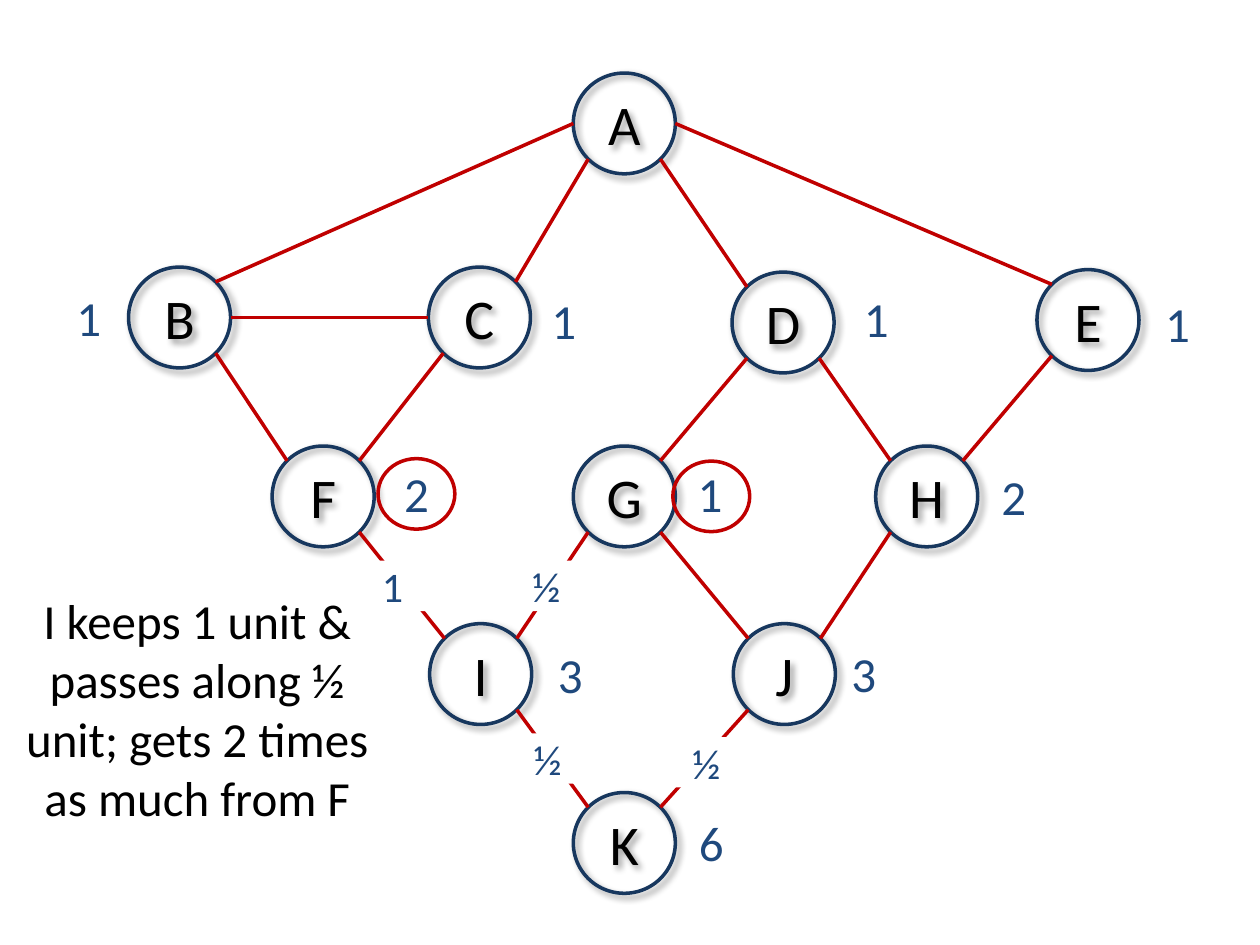
from typing import NamedTuple

from lxml import etree
from pptx import Presentation
from pptx import util as u
from pptx.dml.color import RGBColor
from pptx.enum import shapes, text
from pptx.oxml import ns

HUES = {"node": "17375E", "edge": "C00000", "count": "1F497D",
        "text": "000000", "mask": "FFFFFF"}
FONT = "Calibri"
WIDE, HIGH = 0.81, 0.8
DIAG = 0.3536  # half of sin 45, for the corner points of a circle
SITES = {"w": (-0.5, 0), "e": (0.5, 0),
         "nw": (-DIAG, -DIAG), "ne": (DIAG, -DIAG),
         "sw": (-DIAG, DIAG), "se": (DIAG, DIAG)}


class Node(NamedTuple):
    left: float
    top: float


class Edge(NamedTuple):
    start: str
    exit: str
    end: str
    entry: str


class Label(NamedTuple):
    text: str
    left: float
    top: float


NODES = {
    "A": Node(4.55, 0.58),
    "B": Node(1.02, 2.12), "C": Node(3.4, 2.12),
    "D": Node(5.81, 2.16), "E": Node(8.23, 2.14),
    "F": Node(2.16, 3.54), "G": Node(4.55, 3.54), "H": Node(6.95, 3.54),
    "I": Node(3.41, 4.95), "J": Node(5.82, 4.95),
    "K": Node(4.55, 6.29),
}
EDGES = [
    Edge("A", "w", "B", "ne"), Edge("A", "sw", "C", "ne"),
    Edge("A", "se", "D", "nw"), Edge("A", "e", "E", "nw"),
    Edge("B", "e", "C", "w"),
    Edge("B", "se", "F", "nw"), Edge("C", "sw", "F", "ne"),
    Edge("D", "sw", "G", "ne"), Edge("D", "se", "H", "nw"),
    Edge("E", "sw", "H", "ne"),
    Edge("F", "se", "I", "nw"), Edge("G", "sw", "I", "ne"),
    Edge("G", "se", "J", "nw"), Edge("H", "sw", "J", "ne"),
    Edge("I", "se", "K", "nw"), Edge("J", "sw", "K", "ne"),
]
COUNTS = [
    Label("1", 0.4, 2.23), Label("1", 4.17, 2.26),
    Label("1", 6.65, 2.24), Label("1", 9.04, 2.28),
    Label("2", 3, 3.63), Label("1", 5.33, 3.63), Label("2", 7.74, 3.65),
    Label("3", 4.22, 5.07), Label("3", 6.55, 5.06), Label("6", 5.34, 6.4),
]
RINGS = [(3, 3.64), (5.34, 3.66)]
FLOWS = [
    Label("½ ", 4.08, 5.82), Label("½ ", 5.34, 5.85),
    Label("½ ", 4.07, 4.45), Label("1", 2.81, 4.45),
]


def hue(key: str) -> RGBColor:
    return RGBColor.from_string(HUES[key])


def box(*sides: float) -> list[u.Length]:
    return [u.Inches(side) for side in sides]


def write(shape, words: str, size: int, key: str, pad=(0.1, 0.05)) -> None:
    frame = shape.text_frame
    frame.word_wrap = True
    frame.margin_left = frame.margin_right = u.Inches(pad[0])
    frame.margin_top = frame.margin_bottom = u.Inches(pad[1])
    para = frame.paragraphs[0]
    para.text = words
    para.alignment = text.PP_ALIGN.CENTER
    para.font.name = FONT
    para.font.size = u.Pt(size)
    para.font.color.rgb = hue(key)


def stroke(shape, key: str) -> None:
    shape.line.color.rgb = hue(key)
    shape.line.width = u.Pt(2)


def shade(shape) -> None:
    """Give the shape a soft shadow to its lower right."""
    list_ = shape._element.spPr.find(ns.qn("a:effectLst"))
    drop = etree.SubElement(list_, ns.qn("a:outerShdw"), blurRad=str(u.Pt(4)),
                            dist=str(u.Pt(3)), dir="2700000", algn="tl",
                            rotWithShape="0")
    tint = etree.SubElement(drop, ns.qn("a:srgbClr"), val=HUES["text"])
    etree.SubElement(tint, ns.qn("a:alpha"), val="40000")


def draw_ring(slide, key: str, *area: float):
    ring = slide.shapes.add_shape(shapes.MSO_SHAPE.OVAL, *box(*area))
    ring.shadow.inherit = False
    ring.fill.background()
    stroke(ring, key)
    return ring


def draw_node(slide, name: str, node: Node) -> None:
    ring = draw_ring(slide, "node", node.left, node.top, WIDE, HIGH)
    shade(ring)
    ring.text_frame.vertical_anchor = text.MSO_ANCHOR.MIDDLE
    write(ring, name, 32, "text", (0, 0.05))


def point(name: str, site: str) -> list[u.Length]:
    node, (across, down) = NODES[name], SITES[site]
    return box(node.left + WIDE * (0.5 + across),
               node.top + HIGH * (0.5 + down))


def draw_edge(slide, edge: Edge) -> None:
    line = slide.shapes.add_connector(
        shapes.MSO_CONNECTOR.STRAIGHT,
        *point(edge.start, edge.exit), *point(edge.end, edge.entry))
    stroke(line, "edge")
    etree.SubElement(line._element.spPr, ns.qn("a:effectLst"))


def draw_text(slide, words: str, key: str, *area: float) -> None:
    write(slide.shapes.add_textbox(*box(*area)), words, 28, key)


def draw_flow(slide, flow: Label) -> None:
    """Mask the middle of an edge and write its share there."""
    mask = slide.shapes.add_shape(shapes.MSO_SHAPE.RECTANGLE,
                                  *box(flow.left, flow.top, 0.61, 0.4))
    mask.shadow.inherit = False
    mask.fill.solid()
    mask.fill.fore_color.rgb = hue("mask")
    mask.line.fill.background()
    mask.text_frame.vertical_anchor = text.MSO_ANCHOR.TOP
    write(mask, flow.text, 24, "count", (0.1, 0))


def main() -> None:
    deck = Presentation()
    deck.slide_width, deck.slide_height = box(10, 7.5)
    slide = deck.slides.add_slide(deck.slide_layouts[6])
    for name, node in NODES.items():
        draw_node(slide, name, node)
    for edge in EDGES:
        draw_edge(slide, edge)
    for count in COUNTS:
        draw_text(slide, count.text, "count", count.left, count.top, 0.61, 0.57)
    for left, top in RINGS:
        draw_ring(slide, "edge", left, top, 0.61, 0.56)
    draw_text(slide, "I keeps 1 unit & passes along ½ unit; "
              "gets 2 times as much from F", "text", 0, 4.64, 3.13, 1.99)
    for flow in FLOWS:
        draw_flow(slide, flow)
    deck.save("out.pptx")


if __name__ == "__main__":
    main()
